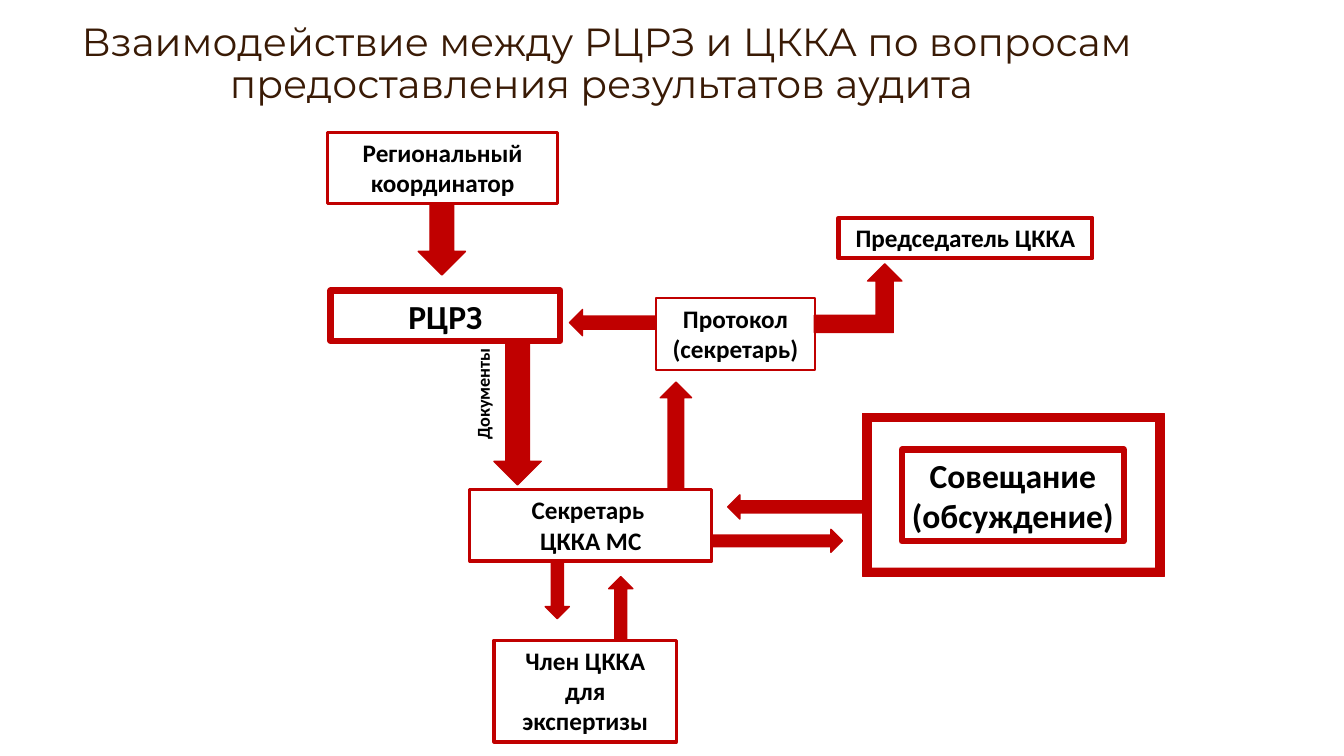
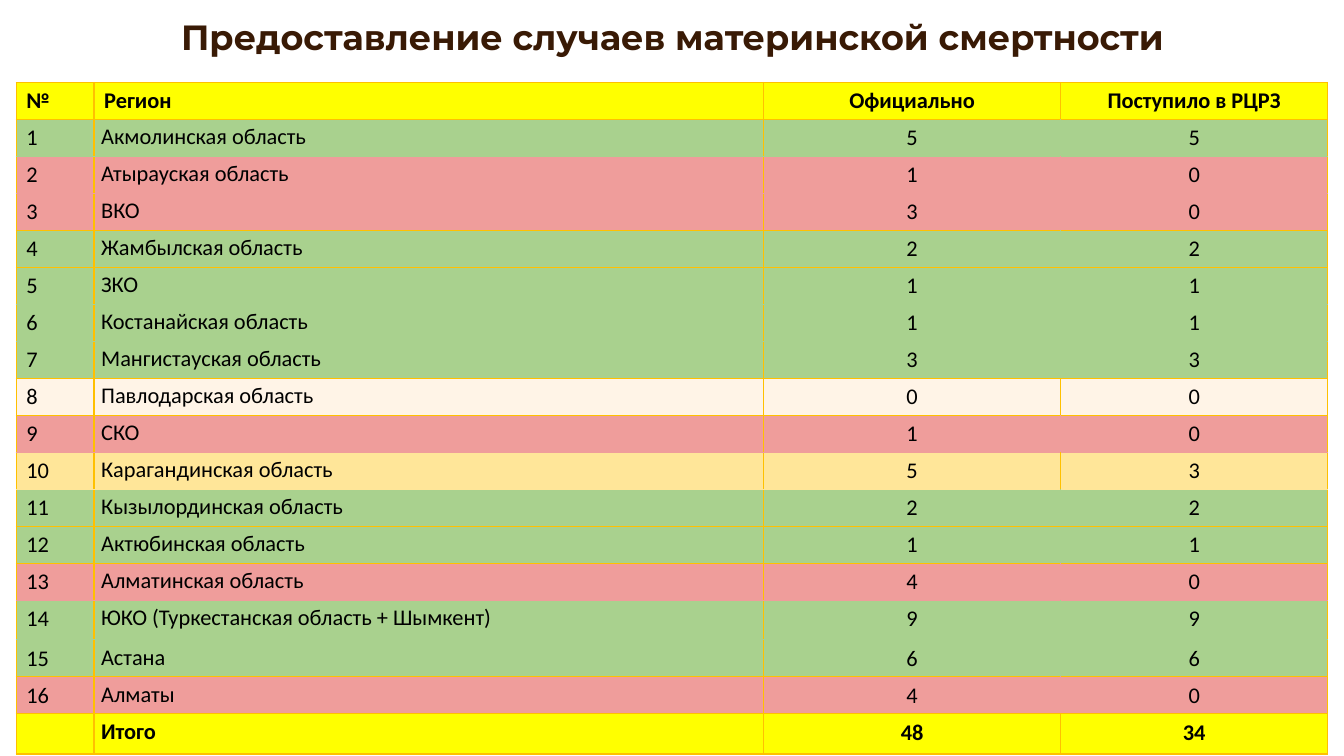
from dataclasses import dataclass

from lxml.etree import SubElement
from pptx import Presentation
from pptx.dml.color import RGBColor
from pptx.enum.shapes import MSO_SHAPE
from pptx.enum.text import MSO_ANCHOR, PP_ALIGN
from pptx.oxml.ns import qn
from pptx.util import Cm, Pt


@dataclass(frozen=True)
class Theme:
    title_font: str = "Montserrat"
    body_font: str = "Calibri"
    title: str = "391A05"
    text: str = "000000"
    accent: str = "C00000"
    rule: str = "FFC000"
    heading: str = "FFFF00"
    complete: str = "A9D18E"
    partial: str = "FFE699"
    missing: str = "EF9D9B"
    no_cases: str = "FFF4E7"
    flow_title_size: float = 28
    table_title_size: float = 25
    large_size: float = 24
    box_size: float = 18
    table_size: float = 16
    label_size: float = 13


THEME = Theme()


@dataclass(frozen=True)
class Area:
    """Left, top, width and height in centimetres."""
    left: float
    top: float
    width: float
    height: float

    def lengths(self) -> tuple:
        return Cm(self.left), Cm(self.top), Cm(self.width), Cm(self.height)


@dataclass(frozen=True)
class Box:
    text: str
    area: Area
    line: float = 2.25
    size: float = THEME.box_size


@dataclass(frozen=True)
class Solid:
    """A filled arrow or frame."""
    kind: MSO_SHAPE
    area: Area
    line: float = 1
    adjustment: float | None = None


@dataclass(frozen=True)
class Region:
    name: str
    official: int
    received: int

    def color(self) -> str:
        if self.official == 0:
            return THEME.no_cases
        if self.received == self.official:
            return THEME.complete
        return THEME.partial if self.received else THEME.missing


BOXES = (
    Box("Региональный координатор", Area(8.26, 3.33, 5.79, 1.8)),
    Box("Секретарь \nЦККА МС", Area(11.84, 12.34, 6.1, 1.8)),
    Box("Член ЦККА для экспертизы", Area(12.45, 16.13, 4.6, 2.57)),
    Box("Совещание (обсуждение)", Area(22.73, 11.33, 5.59, 2.31), 4.5, THEME.large_size),
    Box("РЦРЗ", Area(8.33, 7.32, 5.79, 1.27), 4.5, THEME.large_size),
    Box("Председатель ЦККА", Area(21.13, 5.49, 6.4, 1.02), 3),
    Box("Протокол (секретарь)", Area(16.54, 7.52, 3.99, 1.8), 1.5),
)

SOLIDS = (
    Solid(MSO_SHAPE.DOWN_ARROW, Area(10.54, 5.13, 1.19, 1.8)),
    Solid(MSO_SHAPE.DOWN_ARROW, Area(12.45, 8.59, 1.19, 3.63)),
    Solid(MSO_SHAPE.DOWN_ARROW, Area(13.74, 14.17, 0.61, 1.42)),
    Solid(MSO_SHAPE.UP_ARROW, Area(15.34, 14.53, 0.61, 1.6)),
    Solid(MSO_SHAPE.FRAME, Area(21.74, 10.41, 7.59, 4.11), 0.25, 0.052),
    Solid(MSO_SHAPE.BENT_UP_ARROW, Area(20.52, 6.65, 2.21, 1.73)),
    Solid(MSO_SHAPE.LEFT_ARROW, Area(14.35, 7.8, 2.18, 0.66)),
    Solid(MSO_SHAPE.RIGHT_ARROW, Area(17.93, 13.34, 3.3, 0.58)),
    Solid(MSO_SHAPE.LEFT_ARROW, Area(18.34, 12.47, 3.58, 0.61)),
    Solid(MSO_SHAPE.UP_ARROW, Area(16.64, 9.63, 0.79, 2.69)),
)

HEADINGS = ("№", "Регион", "Официально", "Поступило в РЦРЗ")
TOTALS = ("", "Итого", "48", "34")
REGIONS = (
    Region("Акмолинская область", 5, 5),
    Region("Атырауская область", 1, 0),
    Region("ВКО", 3, 0),
    Region("Жамбылская область", 2, 2),
    Region("ЗКО", 1, 1),
    Region("Костанайская область", 1, 1),
    Region("Мангистауская область", 3, 3),
    Region("Павлодарская область", 0, 0),
    Region("СКО", 1, 0),
    Region("Карагандинская область", 5, 3),
    Region("Кызылординская область", 2, 2),
    Region("Актюбинская область", 1, 1),
    Region("Алматинская область", 4, 0),
    Region("ЮКО (Туркестанская область + Шымкент)", 9, 9),
    Region("Астана", 6, 6),
    Region("Алматы", 4, 0),
)
COLUMN_WIDTHS = (1.96, 16.87, 7.49, 6.73)
ROW_HEIGHT = 0.91
TALL_ROW, TALL_HEIGHT = 14, 0.99


def rgb(color: str) -> RGBColor:
    return RGBColor.from_string(color)


def format_text(frame, size: float, bold: bool = True, align=PP_ALIGN.CENTER,
                font: str = THEME.body_font, color: str = THEME.text,
                spacing: float | None = None) -> None:
    for para in frame.paragraphs:
        para.alignment = align
        if spacing:
            para.line_spacing = spacing
        for span in para.runs:
            span.font.name = font
            span.font.size = Pt(size)
            span.font.bold = bold
            span.font.color.rgb = rgb(color)


def add_title(page, text: str, area: Area, size: float, bold: bool) -> None:
    frame = page.shapes.add_textbox(*area.lengths()).text_frame
    frame.word_wrap = True
    frame.vertical_anchor = MSO_ANCHOR.MIDDLE
    frame.text = text
    format_text(frame, size, bold, font=THEME.title_font, color=THEME.title, spacing=0.9)


def add_outlined(page, kind: MSO_SHAPE, area: Area, line: float):
    """Add a preset shape with the accent outline and no shadow."""
    shape = page.shapes.add_shape(kind, *area.lengths())
    shape.shadow.inherit = False
    shape.line.color.rgb = rgb(THEME.accent)
    shape.line.width = Pt(line)
    return shape


def add_box(page, box: Box) -> None:
    shape = add_outlined(page, MSO_SHAPE.RECTANGLE, box.area, box.line)
    shape.fill.background()
    frame = shape.text_frame
    frame.word_wrap = True
    frame.vertical_anchor = MSO_ANCHOR.TOP
    frame.text = box.text
    format_text(frame, box.size)


def add_solid(page, solid: Solid) -> None:
    shape = add_outlined(page, solid.kind, solid.area, solid.line)
    shape.fill.solid()
    shape.fill.fore_color.rgb = rgb(THEME.accent)
    if solid.adjustment is not None:
        shape.adjustments[0] = solid.adjustment


def add_side_label(page, text: str, area: Area) -> None:
    label = page.shapes.add_textbox(*area.lengths())
    label.rotation = 270
    label.text_frame.word_wrap = True
    label.text_frame.text = text
    format_text(label.text_frame, THEME.label_size, align=PP_ALIGN.LEFT)


def set_border(cell, side: str, color: str) -> None:
    line = SubElement(cell._tc.get_or_add_tcPr(), qn(f"a:ln{side}"), w=str(Pt(1)))
    SubElement(SubElement(line, qn("a:solidFill")), qn("a:srgbClr"), val=color)


def rule_below(row: int, fills: list[str]) -> str:
    """Rules show under two rows of every four and at the table's edges."""
    if row < 0 or row == len(fills) - 1 or row % 4 in (0, 3):
        return THEME.rule
    return fills[row]


def rule_before(column: int, fill: str) -> str:
    """The two count columns run together in complete and missing rows."""
    joined = column == 3 and fill in (THEME.complete, THEME.missing)
    return fill if joined else THEME.rule


def add_region_table(page, left: float, top: float) -> None:
    rows = [HEADINGS]
    rows += [(str(number), region.name, str(region.official), str(region.received))
             for number, region in enumerate(REGIONS, 1)]
    rows.append(TOTALS)
    fills = [THEME.heading, *(region.color() for region in REGIONS), THEME.heading]
    area = Area(left, top, sum(COLUMN_WIDTHS), ROW_HEIGHT * len(rows))
    table = page.shapes.add_table(len(rows), len(HEADINGS), *area.lengths()).table
    for column, width in zip(table.columns, COLUMN_WIDTHS):
        column.width = Cm(width)
    for index, (texts, fill) in enumerate(zip(rows, fills)):
        table.rows[index].height = Cm(TALL_HEIGHT if index == TALL_ROW else ROW_HEIGHT)
        for column, text in enumerate(texts):
            cell = table.cell(index, column)
            set_border(cell, "L", rule_before(column, fill))
            set_border(cell, "R", rule_before(column + 1, fill))
            set_border(cell, "T", rule_below(index - 1, fills))
            set_border(cell, "B", rule_below(index, fills))
            cell.fill.solid()
            cell.fill.fore_color.rgb = rgb(fill)
            named = column == 1 and index > 0
            if named:
                cell.margin_left = cell.margin_right = Cm(0.18)
                cell.margin_top = cell.margin_bottom = 0
            if text:
                cell.text_frame.text = text
                format_text(cell.text_frame, THEME.table_size, fill == THEME.heading,
                            PP_ALIGN.CENTER if column > 1 else PP_ALIGN.LEFT,
                            spacing=1.15 if named else None)


def build_flow_page(page) -> None:
    add_title(page, "Взаимодействие между РЦРЗ и ЦККА по вопросам предоставления результатов аудита ",
              Area(1.24, 0.74, 28.09, 1.8), THEME.flow_title_size, False)
    for box in BOXES:
        add_box(page, box)
    for solid in SOLIDS:
        add_solid(page, solid)
    add_side_label(page, "Документы", Area(10.69, 9.45, 2.95, 0.81))


def build_table_page(page) -> None:
    add_title(page, "Предоставление случаев материнской смертности",
              Area(2.34, 0.48, 29.21, 1.04), THEME.table_title_size, True)
    add_region_table(page, 0.41, 2.08)


def main() -> None:
    deck = Presentation()
    deck.slide_width, deck.slide_height = Cm(33.87), Cm(19.05)
    blank = deck.slide_layouts[6]
    for build in (build_flow_page, build_table_page):
        build(deck.slides.add_slide(blank))
    deck.save("out.pptx")


if __name__ == "__main__":
    main()
